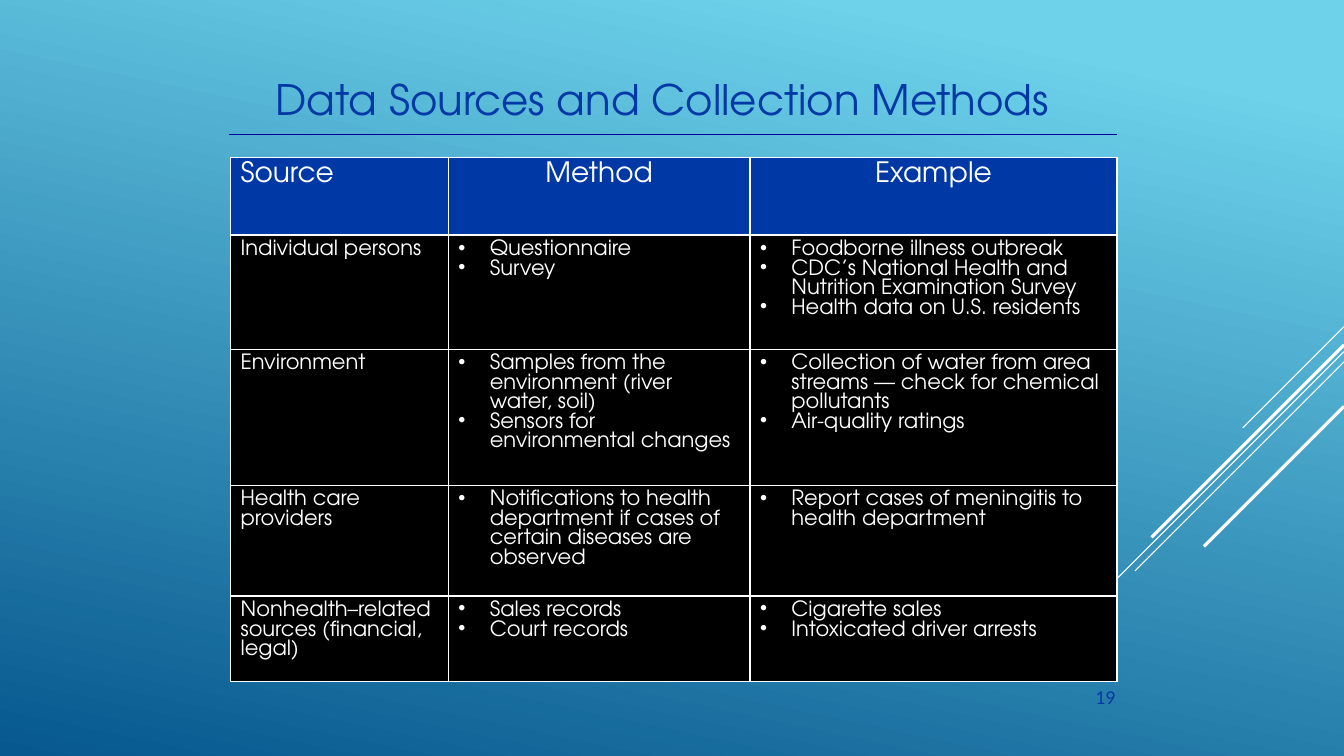
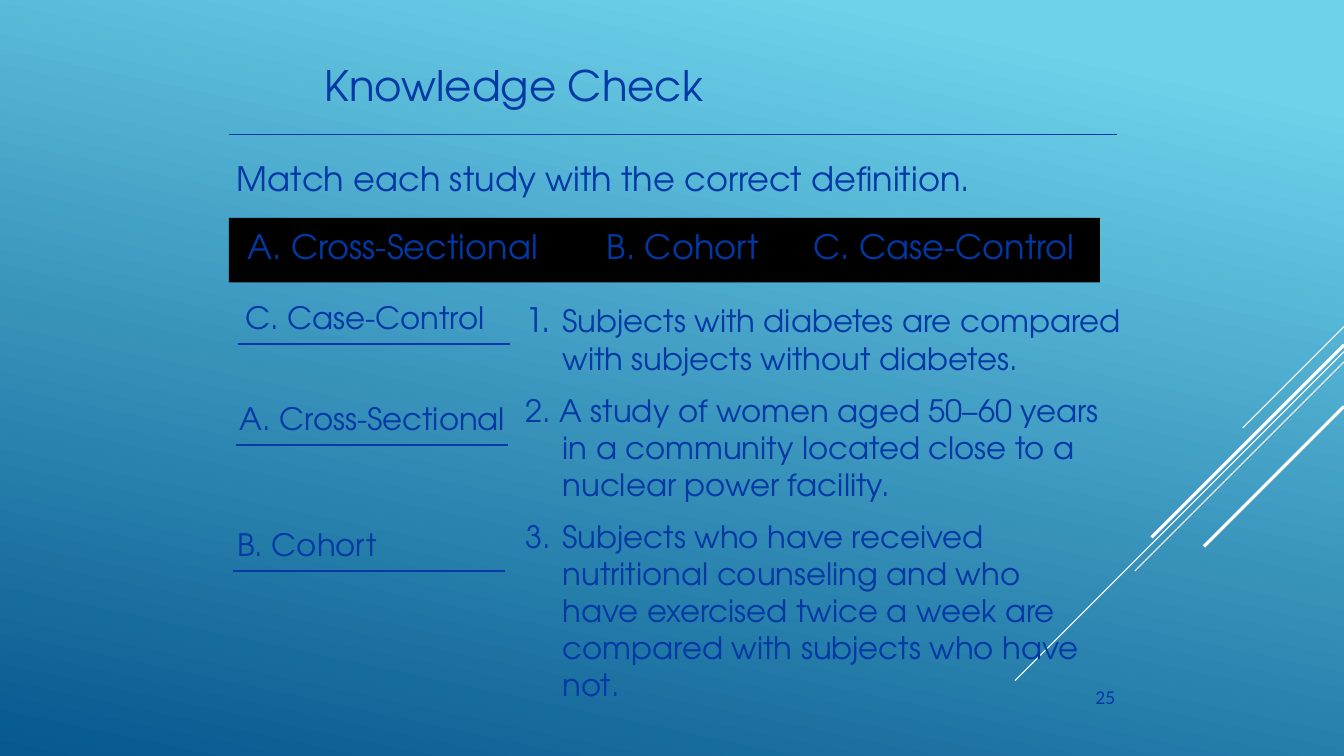
from dataclasses import dataclass

from lxml import etree
from pptx import Presentation
from pptx.dml.color import RGBColor
from pptx.enum.shapes import MSO_CONNECTOR, MSO_SHAPE
from pptx.enum.text import MSO_ANCHOR, MSO_AUTO_SIZE, PP_ALIGN
from pptx.oxml.ns import qn
from pptx.presentation import Presentation as Deck
from pptx.slide import Slide
from pptx.table import Table, _Cell as Cell
from pptx.text.text import TextFrame, _Paragraph as Para
from pptx.util import Cm, Pt

LEFT, MID, RIGHT = PP_ALIGN.LEFT, PP_ALIGN.CENTER, PP_ALIGN.RIGHT
TOP = MSO_ANCHOR.TOP
FIXED = MSO_AUTO_SIZE.NONE
LINE = MSO_CONNECTOR.STRAIGHT
RECT = MSO_SHAPE.RECTANGLE

WIDE, HIGH = 33.87, 19.05
FACE, PLAIN = "TeX Gyre Adventor", "Calibri"
BLUE, NAVY, WHITE, BLACK = "0039A6", "000099", "FFFFFF", "000000"
SKY, DEEP = "6ED2EB", "06588E"


@dataclass
class Box:
    left: float
    top: float
    width: float
    height: float


@dataclass
class Run:
    text: str
    size: float = 22
    tint: str = BLUE
    face: str = FACE


@dataclass
class Ray:
    top: float
    reach: float
    weight: float


@dataclass
class Label:
    box: Box
    text: str
    align: PP_ALIGN = LEFT


@dataclass
class Answer:
    box: Box
    text: str
    start: float


@dataclass
class Item:
    box: Box
    runs: list[Run]


@dataclass
class Row:
    height: float
    source: str
    method: list[str]
    sample: list[str]


RAYS = [
    Ray(8.23, 2.55, 0.75),
    Ray(8.86, 8.29, 0.75),
    Ray(9.12, 5.27, 0.75),
    Ray(8.69, 4.85, 2.25),
    Ray(10.24, 3.53, 2.25),
]
COLS = [5.49, 7.6, 9.25]
HEADS = ["Source", "Method", "Example"]
HEAD = 1.97
ROWS = [
    Row(2.87, "Individual persons", ["Questionnaire", "Survey"],
        ["Foodborne illness outbreak",
         "CDC’s National Health and Nutrition Examination Survey",
         "Health data on U.S. residents"]),
    Row(3.43, "Environment",
        ["Samples from the environment (river water, soil)",
         "Sensors for environmental changes"],
        ["Collection of water from area streams — check for chemical pollutants",
         "Air-quality ratings"]),
    Row(2.79, "Health care providers",
        ["Notifications to health department if cases of certain diseases are observed"],
        ["Report cases of meningitis to health department"]),
    Row(2.16, "Nonhealth–related sources (financial, legal)",
        ["Sales records", "Court records"],
        ["Cigarette sales", "Intoxicated driver arrests"]),
]
LABELS = [
    Label(Box(5.99, 5.56, 8.33, 1.3), "A. Cross-Sectional"),
    Label(Box(13.72, 5.56, 6.99, 1.3), "B. Cohort", MID),
    Label(Box(20.25, 5.56, 7.75, 1.3), "C. Case-Control"),
]
ANSWERS = [
    Answer(Box(5.94, 7.41, 6.99, 1.19), "C. Case-Control", 5.99),
    Answer(Box(5.79, 9.96, 7.57, 1.19), "A. Cross-Sectional", 5.94),
    Answer(Box(5.73, 13.13, 6.99, 1.19), "B. Cohort", 5.87),
]
ITEMS = [
    Item(Box(12.99, 7.42, 16, 2.24),
         [Run("1.\t", 24),
          Run("Subjects with diabetes are compared with subjects without diabetes.")]),
    Item(Box(12.99, 9.75, 15.42, 3.07),
         [Run("2. A study of women aged 50–60 years in a community located "
              "close to a nuclear power facility.")]),
    Item(Box(12.99, 12.92, 15.01, 4.95),
         [Run("3. \tSubjects who have received nutritional counseling and who have "
              "exercised twice a week are compared with subjects who have not.")]),
]


def color(code: str) -> RGBColor:
    return RGBColor.from_string(code)


def place(box: Box) -> tuple[Cm, Cm, Cm, Cm]:
    return Cm(box.left), Cm(box.top), Cm(box.width), Cm(box.height)


def write(para: Para, runs: list[Run], align: PP_ALIGN = LEFT) -> None:
    para.alignment = align
    for part in runs:
        run = para.add_run()
        run.text = part.text
        font = run.font
        font.name, font.size, font.bold = part.face, Pt(part.size), False
        font.color.rgb = color(part.tint)


def indent(para: Para, depth: float) -> None:
    props = para._p.get_or_add_pPr()
    props.set("marL", str(Cm(depth)))
    props.set("indent", str(-Cm(depth)))


def setup(frame: TextFrame) -> None:
    frame.word_wrap = True
    frame.auto_size = FIXED
    frame.vertical_anchor = TOP


def add_text(slide: Slide, box: Box, runs: list[Run],
             align: PP_ALIGN = LEFT, depth: float = 0) -> None:
    frame = slide.shapes.add_textbox(*place(box)).text_frame
    setup(frame)
    para = frame.paragraphs[0]
    write(para, runs, align)
    if depth:
        indent(para, depth)


def add_line(slide: Slide, start: tuple[float, float], end: tuple[float, float],
             tint: str = BLUE, weight: float = 1.25) -> None:
    line = slide.shapes.add_connector(LINE, *map(Cm, start + end))
    line.line.color.rgb = color(tint)
    line.line.width = Pt(weight)
    etree.SubElement(line._element.spPr, qn("a:effectLst"))


def paint(deck: Deck) -> None:
    fill = deck.slide_master.background.fill
    fill.gradient()
    fill.gradient_angle = 258
    for stop, tint, spot in zip(fill.gradient_stops, (SKY, DEEP), (0.1, 1)):
        stop.color.rgb = color(tint)
        stop.position = spot


def add_slide(deck: Deck, title: str, box: Box, align: PP_ALIGN,
              number: str, tint: str) -> Slide:
    slide = deck.slides.add_slide(deck.slide_layouts[5])
    for ray in RAYS:
        add_line(slide, (WIDE, ray.top), (WIDE - ray.reach, ray.top + ray.reach),
                 WHITE, ray.weight)
    head = slide.shapes.title
    head.left, head.top, head.width, head.height = place(box)
    setup(head.text_frame)
    write(head.text_frame.paragraphs[0], [Run(title, 30)], align)
    add_line(slide, (5.78, 3.39), (28.15, 3.39), tint)
    add_text(slide, Box(22.44, 17.13, 5.92, 1.02),
             [Run(number, 14, face=PLAIN)], RIGHT)
    return slide


def style(cell: Cell, tint: str, base: float) -> None:
    props = cell._tc.get_or_add_tcPr()
    for side, weight in zip("LRTB", (1, 1, 1, base)):
        edge = etree.SubElement(props, qn(f"a:ln{side}"), w=str(Pt(weight)))
        fill = etree.SubElement(edge, qn("a:solidFill"))
        etree.SubElement(fill, qn("a:srgbClr"), val=WHITE)
    cell.fill.solid()
    cell.fill.fore_color.rgb = color(tint)


def fill_cell(cell: Cell, lines: list[str], listed: bool) -> None:
    style(cell, BLACK, 1)
    frame = cell.text_frame
    for rank, line in enumerate(lines):
        para = frame.add_paragraph() if rank else frame.paragraphs[0]
        write(para, [Run(line, 15, WHITE)])
        if listed:
            indent(para, 0.79)
            etree.SubElement(para._p.get_or_add_pPr(), qn("a:buChar"), char="•")


def fill_head(table: Table) -> None:
    for col, (width, name) in enumerate(zip(COLS, HEADS)):
        table.columns[col].width = Cm(width)
        cell = table.cell(0, col)
        style(cell, BLUE, 1.5)
        write(cell.text_frame.paragraphs[0], [Run(name, 20, WHITE)],
              MID if col else LEFT)


def add_grid(slide: Slide) -> None:
    highs = [HEAD] + [row.height for row in ROWS]
    box = Box(5.81, 3.96, sum(COLS), sum(highs))
    table = slide.shapes.add_table(len(highs), len(COLS), *place(box)).table
    table.horz_banding = False
    for line, high in zip(table.rows, highs):
        line.height = Cm(high)
    fill_head(table)
    for rank, row in enumerate(ROWS, 1):
        for col, lines in enumerate(([row.source], row.method, row.sample)):
            fill_cell(table.cell(rank, col), lines, col > 0)


def add_quiz(slide: Slide) -> None:
    add_text(slide, Box(5.72, 3.86, 22.43, 1.3),
             [Run("Match each study with the correct definition.", 24)])
    bar = slide.shapes.add_shape(RECT, *place(Box(5.77, 5.49, 21.95, 1.63)))
    bar.shadow.inherit = False
    bar.fill.solid()
    bar.fill.fore_color.rgb = color(BLACK)
    bar.line.fill.background()
    for label in LABELS:
        add_text(slide, label.box, [Run(label.text, 24)], label.align)
    for answer in ANSWERS:
        add_text(slide, answer.box, [Run(answer.text)])
        level = answer.box.top + 1.26
        add_line(slide, (answer.start, level), (answer.start + 6.86, level))
    for item in ITEMS:
        add_text(slide, item.box, item.runs, depth=0.94)


def main() -> None:
    deck = Presentation()
    deck.slide_width, deck.slide_height = Cm(WIDE), Cm(HIGH)
    paint(deck)
    add_grid(add_slide(deck, "Data Sources and Collection Methods",
                       Box(5.33, 1.73, 22.73, 1.55), MID, "19", NAVY))
    add_quiz(add_slide(deck, "Knowledge Check",
                       Box(7.92, 1.37, 11.43, 1.55), LEFT, "25", BLUE))
    deck.save("out.pptx")


if __name__ == "__main__":
    main()
